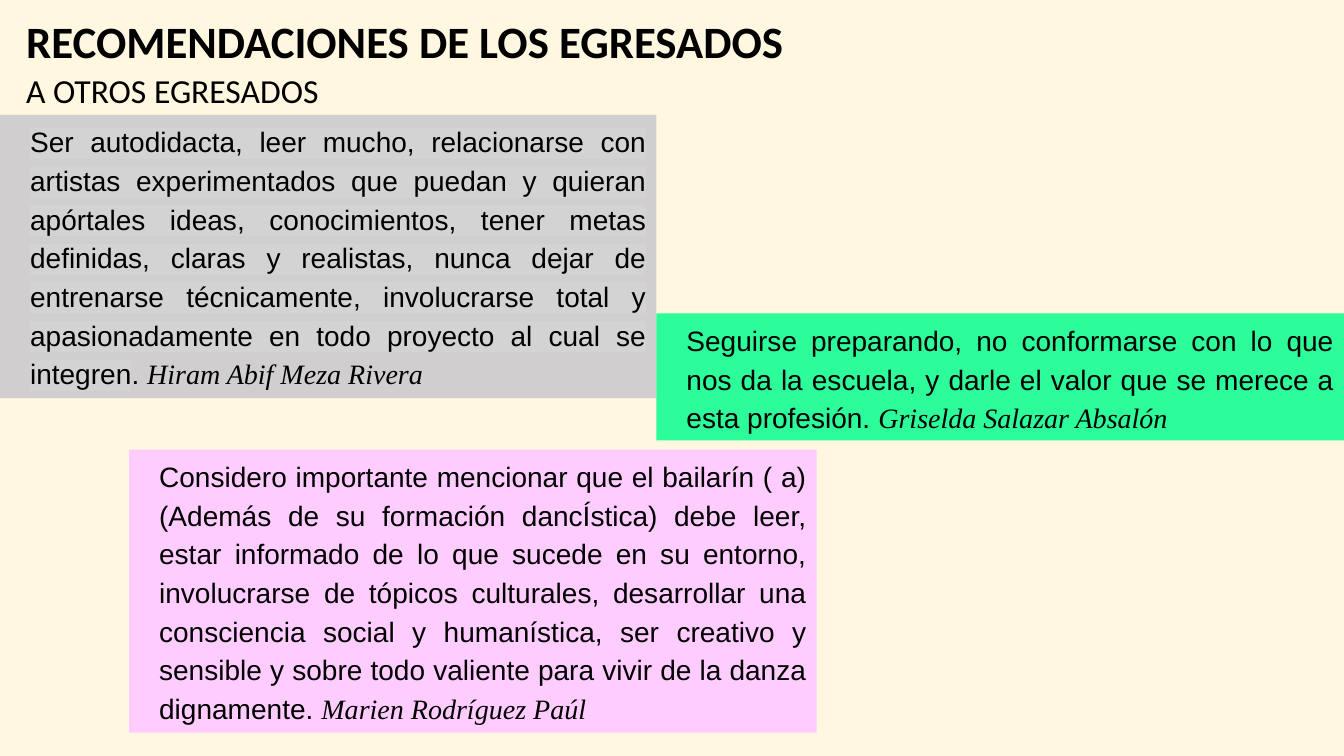
"""Build the slide of recommendations from graduates to other graduates."""
from lxml import etree
from pptx import Presentation
from pptx.dml.color import RGBColor
from pptx.enum.shapes import MSO_SHAPE
from pptx.enum.text import MSO_ANCHOR, PP_ALIGN
from pptx.oxml.ns import qn
from pptx.util import Inches, Pt

RECTANGLE = MSO_SHAPE.RECTANGLE
TOP = MSO_ANCHOR.TOP
LEFT, JUSTIFY = PP_ALIGN.LEFT, PP_ALIGN.JUSTIFY
COLORS = {
    "background": "FFF7E0",
    "text": "000000",
    "gray": "D0CECE",
    "green": "2CFC99",
    "pink": "FFCCFF",
    "highlight": "D3D3D3",
}
QUOTES = [
    ("gray", (0, 1.14, 6.51, 2.81),
     "Ser autodidacta, leer mucho, relacionarse con artistas experimentados que "
     "puedan y quieran apórtales ideas, conocimientos, tener metas definidas, "
     "claras y realistas, nunca dejar de entrenarse técnicamente, involucrarse "
     "total y apasionadamente en todo proyecto al cual se integren",
     ". ", "Hiram Abif Meza Rivera"),
    ("green", (6.51, 3.11, 6.82, 1.26), "",
     "Seguirse preparando, no conformarse con lo que nos da la escuela, y darle "
     "el valor que se merece a esta profesión. ", "Griselda Salazar Absalón"),
    ("pink", (1.28, 4.46, 6.82, 2.81), "",
     "Considero importante mencionar que el bailarín ( a) (Además de su formación "
     "dancÍstica) debe leer, estar informado de lo que sucede en su entorno, "
     "involucrarse de tópicos culturales, desarrollar una consciencia social y "
     "humanística, ser creativo y sensible y sobre todo valiente para vivir de "
     "la danza dignamente. ", "Marien Rodríguez Paúl"),
]


def place(box, left, top, width, height):
    """Position a box and prepare its text frame."""
    box.left, box.top = Inches(left), Inches(top)
    box.width, box.height = Inches(width), Inches(height)
    box.text_frame.word_wrap = True
    box.text_frame.vertical_anchor = TOP


def style(para, font_name, size, align):
    """Set the font and alignment of a paragraph."""
    para.alignment = align
    para.font.name = font_name
    para.font.size = Pt(size)
    para.font.color.rgb = RGBColor.from_string(COLORS["text"])


deck = Presentation()
deck.slide_width, deck.slide_height = Inches(13.33), Inches(7.5)
page = deck.slides.add_slide(deck.slide_layouts[5])
page.background.fill.solid()
page.background.fill.fore_color.rgb = RGBColor.from_string(COLORS["background"])

title = page.shapes.title
place(title, 0.16, 0.09, 8.71, 0.64)
title.text_frame.text = "RECOMENDACIONES DE LOS EGRESADOS"
style(title.text_frame.paragraphs[0], "Calibri", 32, LEFT)
title.text_frame.paragraphs[0].font.bold = True

subtitle = page.shapes.add_textbox(0, 0, 0, 0)
place(subtitle, 0.16, 0.64, 5.32, 0.5)
subtitle.text_frame.text = "A OTROS EGRESADOS"
style(subtitle.text_frame.paragraphs[0], "Calibri", 24, LEFT)

for color, bounds, marked, plain, author in QUOTES:
    card = page.shapes.add_shape(RECTANGLE, 0, 0, 0, 0)
    place(card, *bounds)
    card.shadow.inherit = False
    card.fill.solid()
    card.fill.fore_color.rgb = RGBColor.from_string(COLORS[color])
    card.line.fill.background()

    para = card.text_frame.paragraphs[0]
    style(para, "Arial", 20, JUSTIFY)
    para.line_spacing = 1.15
    para.space_after = Pt(10)
    para._p.get_or_add_pPr().set("marL", str(Inches(0.2)))

    if marked:
        span = para.add_run()
        span.text = marked
        highlight = etree.SubElement(span._r.get_or_add_rPr(), qn("a:highlight"))
        etree.SubElement(highlight, qn("a:srgbClr"), val=COLORS["highlight"])
    para.add_run().text = plain
    span = para.add_run()
    span.text = author
    span.font.name = "Times New Roman"
    span.font.italic = True

deck.save("out.pptx")
